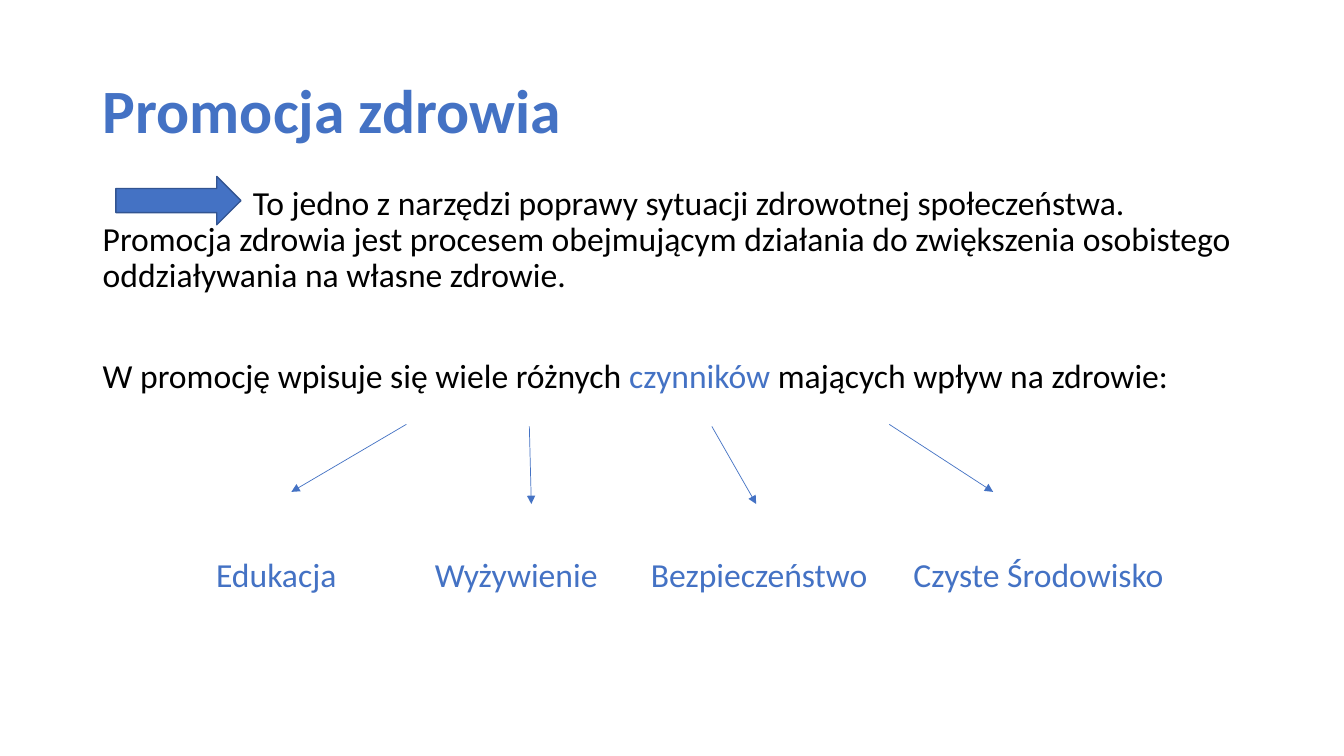
from dataclasses import dataclass

from lxml.etree import SubElement
from pptx import Presentation
from pptx.dml.color import RGBColor
from pptx.enum.shapes import MSO_CONNECTOR, MSO_SHAPE
from pptx.enum.text import MSO_ANCHOR, PP_ALIGN
from pptx.oxml.ns import qn
from pptx.slide import Slide
from pptx.text.text import TextFrame, _Paragraph
from pptx.util import Inches, Pt

COLORS = {"blue": "4472C4", "outline": "325491", "black": "000000"}
FONT = "Calibri"


@dataclass
class Factor:
    """A factor's label, the centre of that label, and its arrow."""
    label: str
    center: float
    start: tuple[float, float]
    end: tuple[float, float]


FACTORS = [
    Factor("Edukacja", 2.74, (4.03, 4.21), (2.89, 4.88)),
    Factor("Wyżywienie", 5.12, (5.25, 4.23), (5.27, 5)),
    Factor("Bezpieczeństwo", 7.53, (7.06, 4.23), (7.5, 5)),
    Factor("Czyste Środowisko", 10.3, (8.82, 4.21), (9.85, 4.88)),
]


def color(name: str) -> RGBColor:
    """Look up a colour by name."""
    return RGBColor.from_string(COLORS[name])


def style(p: _Paragraph, size: int, name: str, bold: bool = False) -> None:
    """Set the font and line spacing of a paragraph."""
    p.line_spacing = 0.9
    p.font.name, p.font.size, p.font.bold = FONT, Pt(size), bold
    p.font.color.rgb = color(name)


def add_text(s: Slide, x: float, y: float, w: float, h: float) -> TextFrame:
    """Add a wrapping text box."""
    tf = s.shapes.add_textbox(Inches(x), Inches(y), Inches(w), Inches(h)).text_frame
    tf.word_wrap = True
    return tf


def add_title(s: Slide) -> None:
    """Place and format the title."""
    sp = s.shapes.title
    sp.left, sp.top, sp.width, sp.height = map(Inches, (0.92, 0.4, 11.5, 1.45))
    tf = sp.text_frame
    tf.text = "Promocja zdrowia"
    tf.vertical_anchor = MSO_ANCHOR.MIDDLE
    p = tf.paragraphs[0]
    p.alignment = PP_ALIGN.LEFT
    style(p, 44, "blue", True)


def add_body(s: Slide) -> None:
    """Add the definition and the sentence that introduces the factors."""
    tf = add_text(s, 0.92, 1.8, 11.5, 2.4)
    p = tf.paragraphs[0]
    p.text = (
        "To jedno z narzędzi poprawy sytuacji zdrowotnej społeczeństwa. "
        "Promocja zdrowia jest procesem obejmującym działania do zwiększenia "
        "osobistego oddziaływania na własne zdrowie."
    )
    style(p, 24, "black")
    p._p.get_or_add_pPr().set("indent", str(Inches(1.49)))
    p = tf.add_paragraph()
    style(p, 24, "black")
    p.space_before = Pt(46)
    p.add_run().text = "W promocję wpisuje się wiele różnych "
    r = p.add_run()
    r.text = "czynników"
    r.font.color.rgb = color("blue")
    p.add_run().text = " mających wpływ na zdrowie:"


def add_block_arrow(s: Slide) -> None:
    """Add the block arrow that points at the definition."""
    sp = s.shapes.add_shape(
        MSO_SHAPE.RIGHT_ARROW, Inches(1.15), Inches(1.75), Inches(1.24), Inches(0.48)
    )
    sp.shadow.inherit = False
    sp.fill.solid()
    sp.fill.fore_color.rgb = color("blue")
    sp.line.color.rgb = color("outline")
    sp.line.width = Pt(1)


def add_factor(s: Slide, factor: Factor) -> None:
    """Add a factor's arrow and centred label."""
    cx = s.shapes.add_connector(
        MSO_CONNECTOR.STRAIGHT, *map(Inches, factor.start + factor.end)
    )
    cx.line.color.rgb = color("blue")
    cx.line.width = Pt(0.5)
    SubElement(cx.line._get_or_add_ln(), qn("a:tailEnd"), type="triangle")
    SubElement(cx._element.spPr, qn("a:effectLst"))
    width = 2.8
    tf = add_text(s, factor.center - width / 2, 5.47, width, 0.5)
    tf.vertical_anchor = MSO_ANCHOR.MIDDLE
    p = tf.paragraphs[0]
    p.text = factor.label
    p.alignment = PP_ALIGN.CENTER
    style(p, 24, "blue")


def main() -> None:
    """Build and save the slide."""
    prs = Presentation()
    prs.slide_width, prs.slide_height = Inches(13.33), Inches(7.5)
    s = prs.slides.add_slide(prs.slide_layouts[5])
    add_title(s)
    add_body(s)
    add_block_arrow(s)
    for factor in FACTORS:
        add_factor(s, factor)
    prs.save("out.pptx")


if __name__ == "__main__":
    main()
